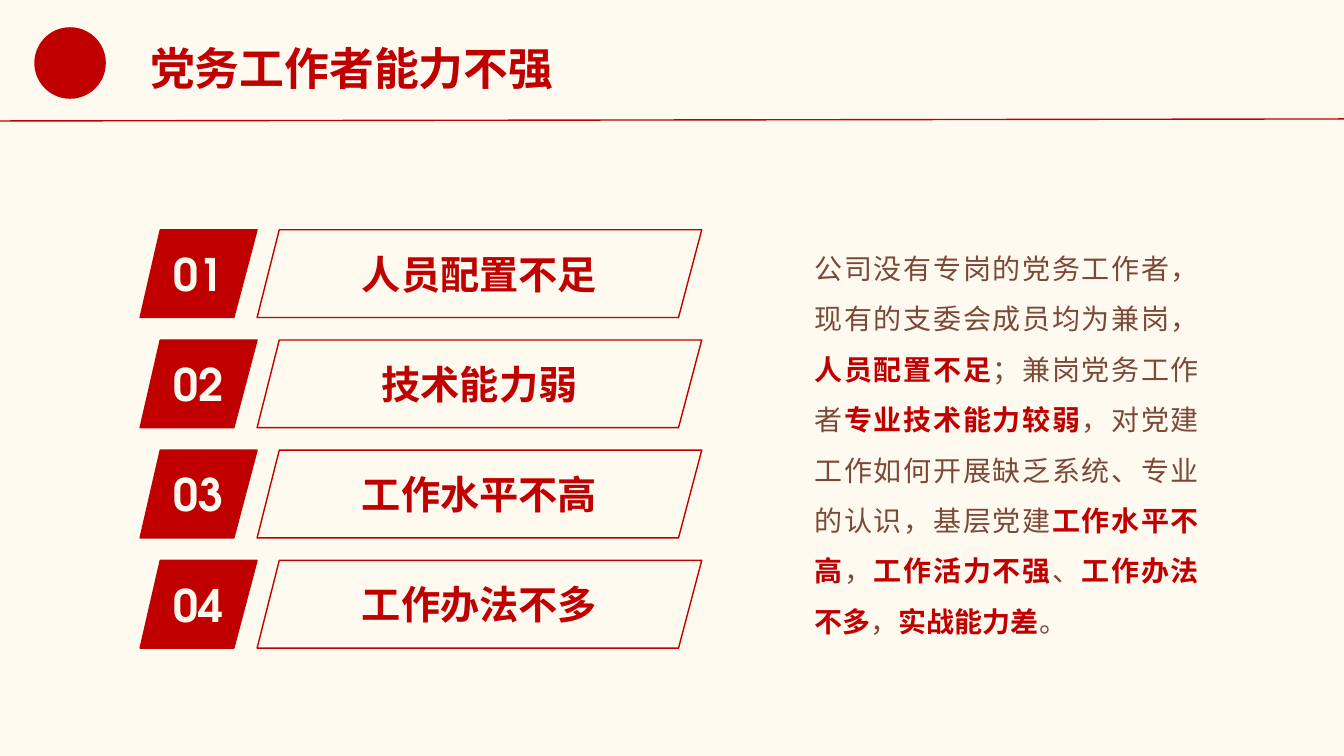
from dataclasses import dataclass

from lxml.etree import SubElement
from pptx import Presentation
from pptx.dml.color import RGBColor
from pptx.enum.shapes import MSO_CONNECTOR, MSO_SHAPE
from pptx.enum.text import MSO_ANCHOR, MSO_AUTO_SIZE, PP_ALIGN
from pptx.oxml.ns import qn
from pptx.shapes.autoshape import Shape
from pptx.slide import Slide
from pptx.util import Inches, Pt


@dataclass(frozen=True)
class Theme:
    red: RGBColor = RGBColor(0xC0, 0x00, 0x00)
    cream: RGBColor = RGBColor(0xFF, 0xFA, 0xF0)
    brown: RGBColor = RGBColor(0x7C, 0x49, 0x39)
    hans: str = "Noto Sans CJK SC"
    digits: str = "TeX Gyre Adventor"
    large: int = 32
    medium: int = 28
    small: int = 20
    line: int = 1


@dataclass(frozen=True)
class Panel:
    """A slanted panel; each lean is how far a side shifts left on its way down."""
    left: float
    right: float
    lean_left: float
    lean_right: float
    filled: bool
    face: str
    size: int


THEME = Theme()
BADGE = Panel(1.39, 2.55, 0.2, 0.23, True, THEME.digits, THEME.large)
LABEL = Panel(2.55, 6.96, 0.22, 0.23, False, THEME.hans, THEME.medium)
TOP, LAST, HEIGHT = 2.28, 5.56, 0.87
TITLE = "党务工作者能力不强"
ISSUES = ["人员配置不足", "技术能力弱", "工作水平不高", "工作办法不多"]
# Plain and stressed parts alternate, plain first.
STORY = [
    "公司没有专岗的党务工作者，现有的支委会成员均为兼岗，",
    "人员配置不足",
    "；兼岗党务工作者",
    "专业技术能力较弱",
    "，对党建工作如何开展缺乏系统、专业的认识，基层党建",
    "工作水平不高",
    "，",
    "工作活力不强",
    "、",
    "工作办法不多",
    "，",
    "实战能力差",
    "。",
]


def style(para, face: str, size: int, color: RGBColor, bold: bool) -> None:
    """Set the paragraph font for both Latin and East Asian letters."""
    font = para.font
    font.name, font.size, font.bold = face, Pt(size), bold
    font.color.rgb = color
    props = para._p.get_or_add_pPr().find(qn("a:defRPr"))
    SubElement(props, qn("a:ea")).set("typeface", face)


def add_panel(slide: Slide, panel: Panel, top: float, text: str) -> Shape:
    base = top + HEIGHT
    pen = slide.shapes.build_freeform(
        Inches(panel.left + panel.lean_left), Inches(top))
    corners = [(panel.right, top), (panel.right - panel.lean_right, base),
               (panel.left, base)]
    pen.add_line_segments([(Inches(x), Inches(y)) for x, y in corners])
    shape = pen.convert_to_shape()
    shape.shadow.inherit = False
    shape.line.color.rgb = THEME.red
    shape.line.width = Pt(THEME.line)
    if panel.filled:
        shape.fill.solid()
        shape.fill.fore_color.rgb = THEME.red
    else:
        shape.fill.background()
    shape.text_frame.vertical_anchor = MSO_ANCHOR.MIDDLE
    para = shape.text_frame.paragraphs[0]
    para.text = text
    para.alignment = PP_ALIGN.CENTER
    color = THEME.cream if panel.filled else THEME.red
    style(para, panel.face, panel.size, color, True)
    return shape


def add_box(slide: Slide, left: float, top: float, width: float,
            height: float, wrap: bool):
    """Add a growing text box and return its first paragraph."""
    box = slide.shapes.add_textbox(
        Inches(left), Inches(top), Inches(width), Inches(height))
    box.text_frame.word_wrap = wrap
    box.text_frame.auto_size = MSO_AUTO_SIZE.SHAPE_TO_FIT_TEXT
    return box.text_frame.paragraphs[0]


def add_header(slide: Slide) -> None:
    disc = slide.shapes.add_shape(
        MSO_SHAPE.OVAL, Inches(0.34), Inches(0.27), Inches(0.71), Inches(0.71))
    disc.shadow.inherit = False
    disc.fill.solid()
    disc.fill.fore_color.rgb = THEME.red
    disc.line.fill.background()
    rule = slide.shapes.add_connector(
        MSO_CONNECTOR.STRAIGHT, 0, Inches(1.2), Inches(13.33), Inches(1.18))
    rule.line.color.rgb = THEME.red
    rule.line.width = Pt(THEME.line)
    SubElement(rule._element.spPr, qn("a:effectLst"))
    title = add_box(slide, 1.39, 0.36, 4.24, 0.64, False)
    title.text = TITLE
    style(title, THEME.hans, THEME.large, THEME.red, True)


def add_story(slide: Slide) -> None:
    para = add_box(slide, 7.98, 2.28, 4.01, 4.14, True)
    para.alignment = PP_ALIGN.JUSTIFY
    para.line_spacing = 1.5
    style(para, THEME.hans, THEME.small, THEME.brown, False)
    for index, part in enumerate(STORY):
        run = para.add_run()
        run.text = part
        if index % 2:
            run.font.bold = True
            run.font.color.rgb = THEME.red


def main() -> None:
    deck = Presentation()
    deck.slide_width, deck.slide_height = Inches(13.33), Inches(7.5)
    slide = deck.slides.add_slide(deck.slide_layouts[6])
    slide.background.fill.solid()
    slide.background.fill.fore_color.rgb = THEME.cream
    add_header(slide)
    step = (LAST - TOP) / (len(ISSUES) - 1)
    for index, issue in enumerate(ISSUES):
        top = TOP + index * step
        add_panel(slide, BADGE, top, f"{index + 1:02}")
        add_panel(slide, LABEL, top, issue)
    add_story(slide)
    deck.save("out.pptx")


if __name__ == "__main__":
    main()
